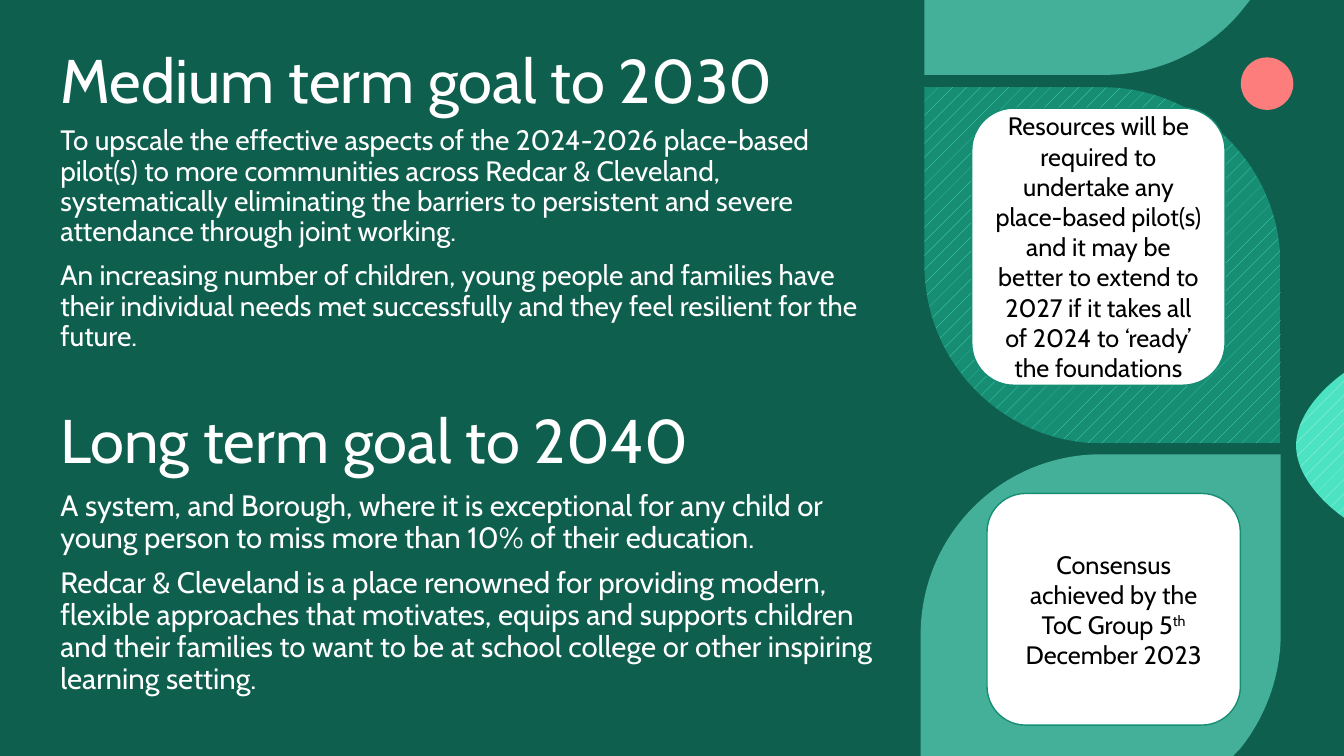
from lxml.etree import SubElement
from pptx import Presentation
from pptx.dml.color import RGBColor
from pptx.enum.dml import MSO_PATTERN
from pptx.enum.shapes import MSO_SHAPE
from pptx.enum.text import MSO_ANCHOR, PP_ALIGN
from pptx.oxml.ns import qn
from pptx.util import Pt

NIGHT = RGBColor(0x09, 0x39, 0x2F)
VEIL = RGBColor(0x18, 0x99, 0x7E)
SEA = RGBColor(0x69, 0xE7, 0xCC)
TEAL = RGBColor(0x17, 0x8E, 0x74)
MINT = RGBColor(0x4B, 0xE3, 0xC2)
PALE_MINT = RGBColor(0xC3, 0xF6, 0xEB)
CORAL = RGBColor(0xFD, 0x7C, 0x7C)
EDGE = RGBColor(0x16, 0x8E, 0x74)
WHITE = RGBColor(0xFF, 0xFF, 0xFF)
BLACK = RGBColor(0, 0, 0)
FONT = "Cabin"

MEDIUM_GOAL = [
    "To upscale the effective aspects of the 2024-2026 place-based pilot(s) to more "
    "communities across Redcar & Cleveland, systematically eliminating the barriers to "
    "persistent and severe attendance through joint working.",
    "An increasing number of children, young people and families have their individual "
    "needs met successfully and they feel resilient for the future.",
]
LONG_GOAL = [
    "A system, and Borough, where it is exceptional for any child or young person to miss "
    "more than 10% of their education.",
    "Redcar & Cleveland is a place renowned for providing modern, flexible approaches that "
    "motivates, equips and supports children and their families to want to be at school "
    "college or other inspiring learning setting.",
]
RESOURCES = (
    "Resources will be required to undertake any place-based pilot(s) and it may be better "
    "to extend to 2027 if it takes all of 2024 to ‘ready’ the foundations"
)


def add_text(para, text, size, color=WHITE, superscript=False):
    """Append a formatted span to a paragraph."""
    span = para.add_run()
    span.text = text
    span.font.name = FONT
    span.font.size = Pt(size)
    span.font.color.rgb = color
    if superscript:
        span._r.get_or_add_rPr().set("baseline", "30000")


def paint(shape, color, stripe=None, opacity=100):
    """Fill a shape flat or striped, without outline or shadow."""
    shape.shadow.inherit = False
    shape.line.fill.background()
    if stripe is not None:
        shape.fill.patterned()
        shape.fill.pattern = MSO_PATTERN.PERCENT_5
        shape.fill.fore_color.rgb = stripe
        shape.fill.back_color.rgb = color
        return
    shape.fill.solid()
    shape.fill.fore_color.rgb = color
    if opacity < 100:
        tint = next(shape._element.spPr.iter(qn("a:srgbClr")))
        SubElement(tint, qn("a:alpha")).set("val", str(opacity * 1000))


def add_preset(page, kind, box):
    """Add a preset shape in a box given in points."""
    return page.shapes.add_shape(kind, *map(Pt, box))


def add_outline(page, left, top, segments):
    """Draw a closed outline from line ends (2 numbers) and curves (6 numbers)."""
    start, *ends = [(Pt(left + part[-2]), Pt(top + part[-1])) for part in segments]
    builder = page.shapes.build_freeform(*start, scale=1.0)
    builder.add_line_segments(ends, close=True)
    shape = builder.convert_to_shape()
    strokes = list(shape._element.iter(qn("a:lnTo")))
    for stroke, part in zip(strokes, segments[1:]):
        if len(part) == 6:
            curve = stroke.makeelement(qn("a:cubicBezTo"))
            for x, y in zip(part[::2], part[1::2]):
                point = SubElement(curve, qn("a:pt"))
                point.set("x", str(Pt(x)))
                point.set("y", str(Pt(y)))
            stroke.getparent().replace(stroke, curve)
    return shape


def add_leaves(page, left, top):
    """Place the column of leaf shapes and the dot at the right edge."""
    paint(add_preset(page, MSO_SHAPE.OVAL, (left + 226, top + 41, 37.5, 37.5)), CORAL)
    paint(add_outline(page, left, top, [
        (0, 0), (232.6, 0), (227.5, 6.5),
        (204.5, 35.3, 168.5, 53.5, 128.2, 53.5), (0, 53.5)]), SEA, opacity=60)
    paint(add_outline(page, left - 2.7, top + 324.5, [
        (128.9, 0), (257.2, 0), (257.2, 128.2),
        (257.2, 159.1, 246.2, 187.9, 228.2, 210.4), (223.2, 215.5),
        (0, 215.5), (0, 128.9), (0, 57.6, 57.6, 0, 128.9, 0)]), SEA, opacity=60)
    paint(add_outline(page, left + 265.5, top + 266.4, [
        (34.2, 0), (34.2, 103.4),
        (34.2, 103.4, 0, 80.6, 0, 51.8), (0, 23, 34.2, 0, 34.2, 0)]),
        MINT, stripe=PALE_MINT)
    paint(add_outline(page, left, top + 62.3, [
        (254.4, 254.4), (127.2, 254.4), (57, 254.4, 0, 197.4, 0, 127.2), (0, 0),
        (127.2, 0), (197.4, 0, 254.4, 57, 254.4, 127.2)]), TEAL, stripe=MINT)


def add_text_box(page, box, anchor=MSO_ANCHOR.TOP):
    """Add a wrapping text box and return its frame."""
    frame = page.shapes.add_textbox(*map(Pt, box)).text_frame
    frame.word_wrap = True
    frame.vertical_anchor = anchor
    return frame


def add_goals(page, left, top, width):
    """Place the title and the goal texts below it."""
    title = add_text_box(page, (left, top, width, 69), MSO_ANCHOR.BOTTOM).paragraphs[0]
    title.line_spacing = 0.9
    add_text(title, "Medium term goal to 2030", 44)

    frame = add_text_box(page, (left, top + 69, width, 399.6))
    rows = [(text, 20, 10) for text in MEDIUM_GOAL]
    rows.append(("Long term goal to 2040", 44, 41.5))
    rows += [(text, 21, 10) for text in LONG_GOAL]
    for index, (text, size, gap) in enumerate(rows):
        para = frame.add_paragraph() if index else frame.paragraphs[0]
        para.line_spacing = 0.9
        para.space_before = Pt(gap)
        add_text(para, text, size)


def add_card(page, box, spans):
    """Place a white rounded card with centred (text, superscript) spans."""
    card = add_preset(page, MSO_SHAPE.ROUNDED_RECTANGLE, box)
    paint(card, WHITE)
    card.line.color.rgb = EDGE
    card.line.width = Pt(1)
    card.text_frame.word_wrap = True
    card.text_frame.vertical_anchor = MSO_ANCHOR.MIDDLE
    para = card.text_frame.paragraphs[0]
    para.alignment = PP_ALIGN.CENTER
    for text, superscript in spans:
        add_text(para, text, 18, color=BLACK, superscript=superscript)


def main():
    """Build the goals slide and save it."""
    deck = Presentation()
    deck.slide_width, deck.slide_height = Pt(960), Pt(540)
    page = deck.slides.add_slide(deck.slide_layouts[6])
    page.background.fill.solid()
    page.background.fill.fore_color.rgb = NIGHT
    paint(add_preset(page, MSO_SHAPE.RECTANGLE, (0, 0, 960, 540)), VEIL, opacity=40)
    add_leaves(page, 660.3, 0)
    add_goals(page, 36, 18, 605)
    add_card(page, (694.1, 77.2, 181, 198), [(RESOURCES, False)])
    add_card(page, (705, 352.5, 181, 165.5), [
        ("Consensus achieved by the ToC Group 5", False),
        ("th", True),
        (" December 2023", False)])
    deck.save("out.pptx")


if __name__ == "__main__":
    main()
